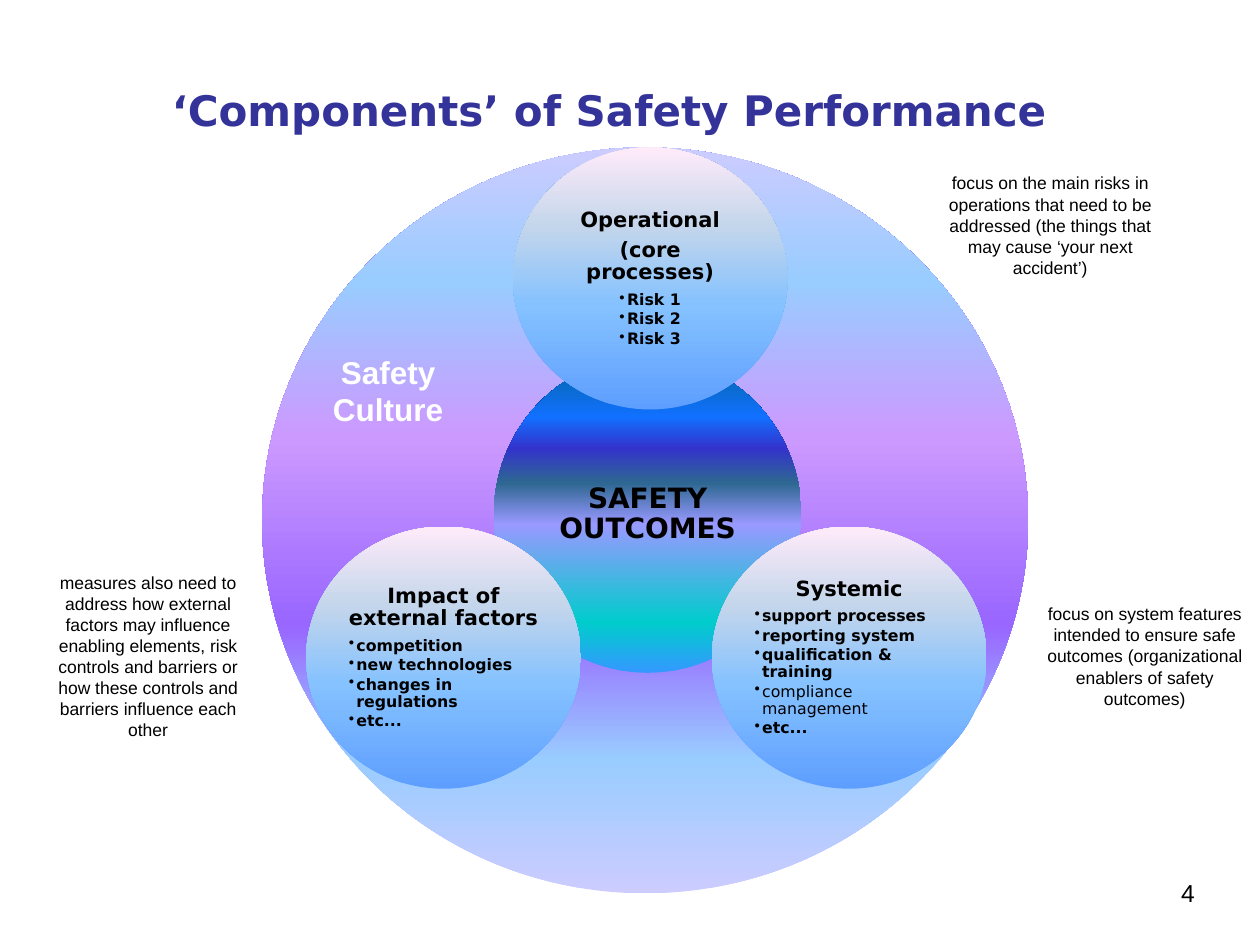
from lxml.etree import SubElement as Sub
from pptx import Presentation
from pptx.dml.color import RGBColor as Rgb
from pptx.enum.shapes import MSO_SHAPE as Shape
from pptx.enum.text import MSO_ANCHOR as Anchor, MSO_AUTO_SIZE as Auto, PP_ALIGN as Align
from pptx.oxml.ns import qn
from pptx.util import Inches, Pt

HUES = {"ink": "000000", "title": "333399", "white": "FFFFFF"}
FADES = {
    "culture": [(0, "CCCCFF"), (18, "99CCFF"), (36, "9966FF"),
                (61, "CC99FF"), (82, "99CCFF"), (100, "CCCCFF")],
    "outcome": [(0, "3399FF"), (16, "00CCCC"), (47, "9999FF"), (60, "2E6792"),
                (71, "3333CC"), (81, "1170FF"), (100, "006699")],
    "part": [(0, "5E9EFF"), (40, "85C2FF"), (70, "C4D6EB"), (100, "FFEBFA")],
}
HEAD, BODY = "DejaVu Sans", "Arial"
TITLE = "‘Components’ of Safety Performance"
SIZE = (2.18, 2.08)
PARTS = [
    ((4.07, 1.17), ["Operational", "(core processes)"],
     ["Risk 1", "Risk 2", "Risk 3"], Align.CENTER),
    ((5.65, 4.18), ["Systemic"],
     ["support processes", "reporting system", "qualification & training",
      "compliance management", "etc..."], Align.LEFT),
    ((2.43, 4.18), ["Impact of external factors"],
     ["competition", "new technologies", "changes in regulations", "etc..."],
     Align.LEFT),
]
PLAIN = {"compliance management"}
NOTES = [
    ((0.26, 4.49, 1.83, 1.45),
     "measures also need to address how external factors may influence enabling "
     "elements, risk controls and barriers or how these controls and barriers "
     "influence each other", 10, "ink", False, Align.CENTER),
    ((8.17, 4.74, 1.83, 0.94),
     "focus on system features intended to ensure safe outcomes "
     "(organizational enablers of safety outcomes)", 10, "ink", False, Align.CENTER),
    ((7.42, 1.32, 1.83, 0.94),
     "focus on the main risks in operations that need to be addressed "
     "(the things that may cause ‘your next accident’)", 10, "ink", False, Align.CENTER),
    ((2.42, 2.75, 1.32, 0.94), "Safety Culture", 18, "white", True, Align.CENTER),
    ((7.5, 6.92, 2.08, 0.5), "4", 14, "ink", False, Align.RIGHT),
]


def box(*nums):
    """Turn numbers into inch lengths."""
    return [Inches(n) for n in nums]


def write(para, text, size, face, hue="ink", bold=True, align=Align.CENTER):
    """Add one styled run to a paragraph."""
    para.alignment = align
    run = para.add_run()
    run.text = text
    font = run.font
    font.size, font.name, font.bold = Pt(size), face, bold
    font.color.rgb = Rgb.from_string(HUES[hue])


def disc(group, place, fade):
    """Draw an ellipse with an upward gradient."""
    oval = group.shapes.add_shape(Shape.OVAL, *box(*place))
    oval.shadow.inherit = False
    oval.line.fill.background()
    oval.fill.gradient()
    oval.fill.gradient_angle = 90
    stops = next(oval.element.iter(qn("a:gsLst")))
    for stop in list(stops):
        stops.remove(stop)
    for spot, tone in FADES[fade]:
        stop = Sub(stops, qn("a:gs"), pos=str(spot * 1000))
        Sub(stop, qn("a:srgbClr"), val=tone)
    return oval


def label(oval, heads, items=(), align=Align.CENTER, size=12):
    """Fill an ellipse with headings and bullets."""
    frame = oval.text_frame
    frame.word_wrap, frame.vertical_anchor = True, Anchor.MIDDLE
    frame.margin_left = frame.margin_right = Inches(0.02)
    frame.margin_top = frame.margin_bottom = Inches(0.02)
    rows = [(text, False) for text in heads] + [(text, True) for text in items]
    for i, (text, point) in enumerate(rows):
        para = frame.add_paragraph() if i else frame.paragraphs[0]
        if point:
            para.level = 1
            props = para._p.get_or_add_pPr()
            props.set("marL", str(Inches(0.06)))
            props.set("indent", str(-Inches(0.06)))
            Sub(props, qn("a:buChar"), char="•")
        para.line_spacing = 0.9
        para.space_after = Pt(1.4 if point else size * 0.35)
        write(para, text, 9 if point else size, HEAD, bold=text not in PLAIN,
              align=align if point else Align.CENTER)


def main():
    """Build the slide and save it."""
    deck = Presentation()
    deck.slide_width, deck.slide_height = box(10, 7.5)
    slide = deck.slides.add_slide(deck.slide_layouts[5])

    group = slide.shapes.add_group_shape()
    disc(group, (2.08, 1.17, 6.08, 5.92), "culture")
    label(disc(group, (3.92, 2.83, 2.44, 2.51), "outcome"), ["SAFETY OUTCOMES"], size=16)
    for spot, heads, items, align in PARTS:
        label(disc(group, spot + SIZE, "part"), heads, items, align)

    title = slide.shapes.title
    title.left, title.top, title.width, title.height = box(0, 0.42, 9.67, 0.9)
    title.text_frame.vertical_anchor = Anchor.MIDDLE
    write(title.text_frame.paragraphs[0], TITLE, 24, HEAD, "title")

    for place, text, size, hue, bold, align in NOTES:
        frame = slide.shapes.add_textbox(*box(*place)).text_frame
        frame.word_wrap, frame.auto_size = True, Auto.SHAPE_TO_FIT_TEXT
        write(frame.paragraphs[0], text, size, BODY, hue, bold, align)

    deck.save("out.pptx")


if __name__ == "__main__":
    main()
